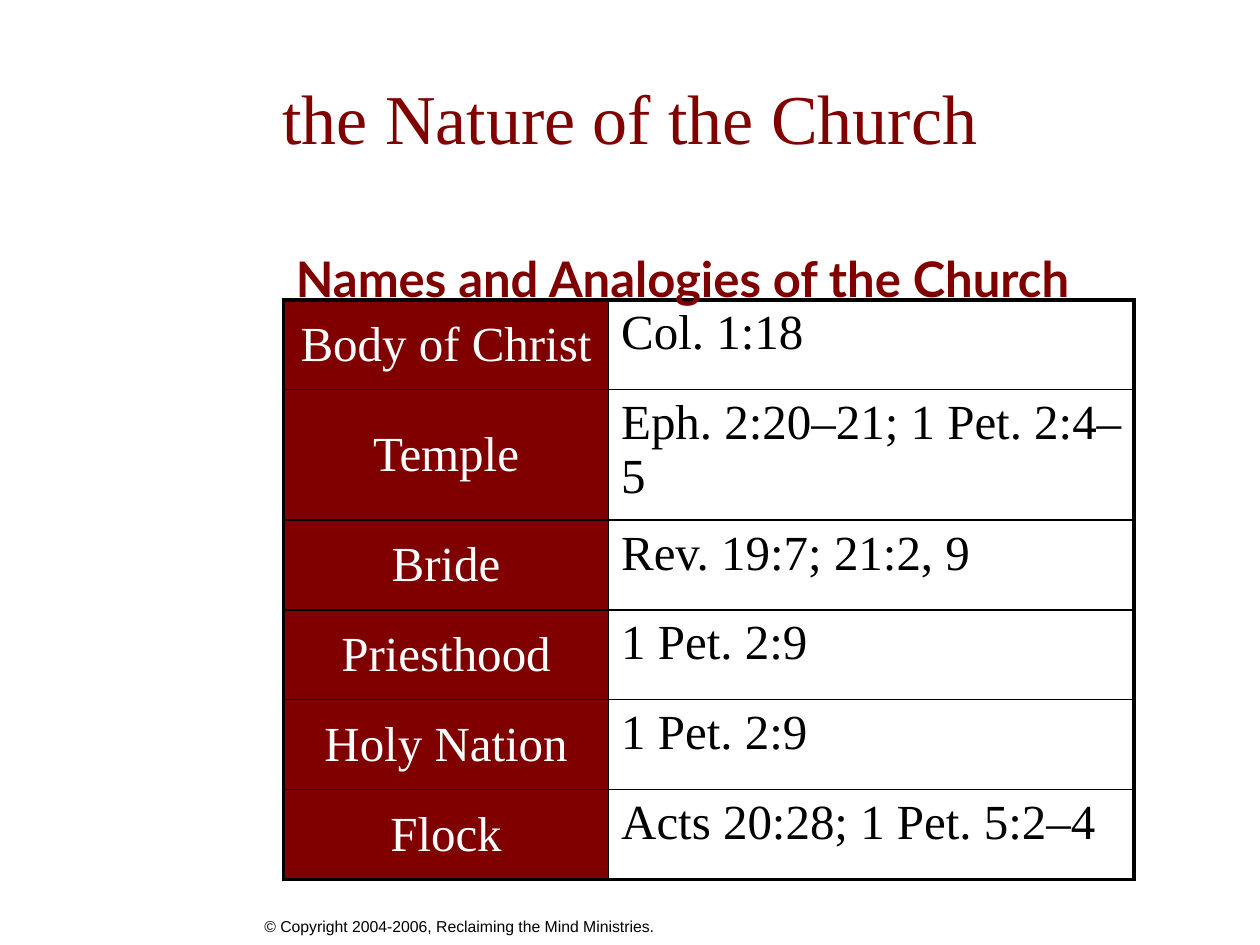
from lxml.etree import SubElement
from pptx import Presentation
from pptx.dml.color import RGBColor
from pptx.enum.text import MSO_ANCHOR as Anchor, PP_ALIGN as Align
from pptx.oxml.ns import qn
from pptx.util import Inches, Pt

COLORS = {"maroon": "800000", "white": "FFFFFF", "black": "000000"}
SERIF = "Times New Roman"
ANALOGIES = [
    ("Body of Christ", "Col. 1:18"),
    ("Temple", "Eph. 2:20–21; 1 Pet. 2:4–5"),
    ("Bride", "Rev. 19:7; 21:2, 9"),
    ("Priesthood", "1 Pet. 2:9"),
    ("Holy Nation", "1 Pet. 2:9"),
    ("Flock", "Acts 20:28; 1 Pet. 5:2–4"),
]


def write(frame, text, color, align=Align.LEFT, **font_format):
    frame.word_wrap = True
    paragraph = frame.paragraphs[0]
    paragraph.alignment = align
    run = paragraph.add_run()
    run.text = text
    run.font.color.rgb = RGBColor.from_string(COLORS[color])
    for name, value in font_format.items():
        setattr(run.font, name, value)


def add_borders(cell, widths):
    properties = cell._tc.get_or_add_tcPr()
    for side, width in widths.items():
        line = SubElement(properties, qn(f"a:ln{side}"), w=str(Pt(width)))
        fill = SubElement(line, qn("a:solidFill"))
        SubElement(fill, qn("a:srgbClr"), val=COLORS["black"])


presentation = Presentation()
presentation.slide_width, presentation.slide_height = Inches(10), Inches(7.5)
slide = presentation.slides.add_slide(presentation.slide_layouts[5])

# Title
title = slide.shapes.title
title.left, title.top = Inches(0.5), Inches(0.3)
title.width, title.height = Inches(9), Inches(1.25)
title.text_frame.vertical_anchor = Anchor.MIDDLE
write(title.text_frame, "the Nature of the Church", "maroon", Align.CENTER,
      name=SERIF, size=Pt(40))

# Copyright line
footer = slide.shapes.add_textbox(Inches(2), Inches(7.23), Inches(3.33), Inches(0.52))
write(footer.text_frame, "© Copyright 2004-2006, Reclaiming the Mind Ministries.",
      "black", name="Arial", size=Pt(9))

# Table of names and references
table = slide.shapes.add_table(len(ANALOGIES), 2, Inches(2.25), Inches(2.38),
                               Inches(6.75), Inches(4.28)).table
table.first_row = table.horz_banding = False
for column, width in zip(table.columns, (2.58, 4.17)):
    column.width = Inches(width)

last = len(ANALOGIES) - 1
for row, texts in enumerate(ANALOGIES):
    for column, text in enumerate(texts):
        cell = table.cell(row, column)
        is_name = column == 0
        # Thick outer frame, thin inner lines
        outer = {"L": is_name, "R": not is_name, "T": row == 0, "B": row == last}
        add_borders(cell, {side: 2.25 if edge else 1 for side, edge in outer.items()})
        if is_name:
            cell.fill.solid()
            cell.fill.fore_color.rgb = RGBColor.from_string(COLORS["maroon"])
            cell.vertical_anchor = Anchor.MIDDLE
        else:
            cell.fill.background()
        write(cell.text_frame, text, "white" if is_name else "black",
              Align.CENTER if is_name else Align.LEFT, name=SERIF, size=Pt(28))

# Table heading
heading = slide.shapes.add_textbox(Inches(2.25), Inches(1.92), Inches(7.42), Inches(0.57))
write(heading.text_frame, "Names and Analogies of the Church", "maroon",
      name="Lato", size=Pt(28), bold=True)

presentation.save("out.pptx")
